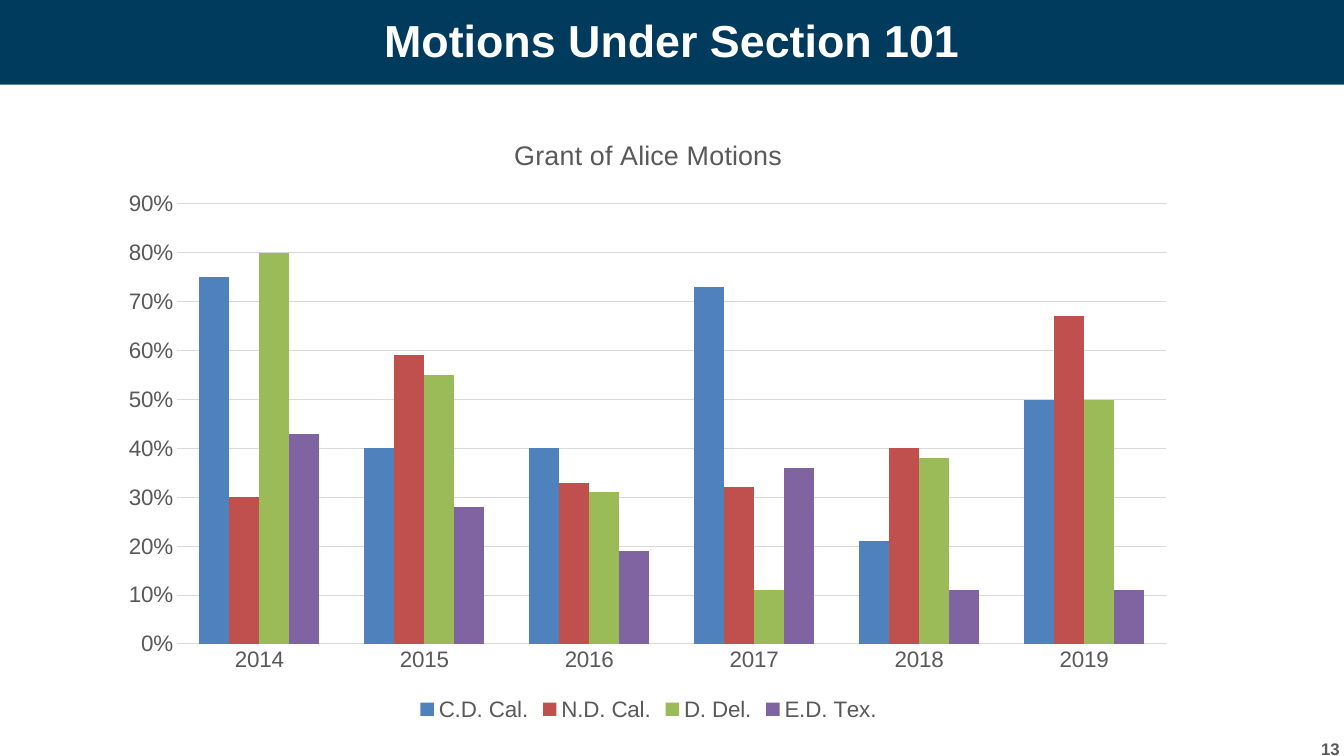
from lxml.etree import SubElement
from pptx import Presentation
from pptx.chart.data import CategoryChartData
from pptx.dml.color import RGBColor
from pptx.enum.chart import XL_CHART_TYPE, XL_LEGEND_POSITION, XL_TICK_MARK
from pptx.enum.shapes import MSO_SHAPE
from pptx.enum.text import MSO_ANCHOR, MSO_AUTO_SIZE, PP_ALIGN
from pptx.oxml.ns import qn
from pptx.util import Pt

NAVY = RGBColor(0x00, 0x3A, 0x5D)
WHITE = RGBColor(0xFF, 0xFF, 0xFF)
GRAY = RGBColor(0x59, 0x59, 0x59)
GRID_GRAY = RGBColor(0xD9, 0xD9, 0xD9)
BLUE = RGBColor(0x4F, 0x81, 0xBD)
RED = RGBColor(0xC0, 0x50, 0x4D)
GREEN = RGBColor(0x9B, 0xBB, 0x59)
PURPLE = RGBColor(0x80, 0x64, 0xA2)

FONT = "Arial"
YEARS = ["2014", "2015", "2016", "2017", "2018", "2019"]
COURTS = [
    ("C.D. Cal.", BLUE, (0.75, 0.4, 0.4, 0.73, 0.21, 0.5)),
    ("N.D. Cal.", RED, (0.3, 0.59, 0.33, 0.32, 0.4, 0.67)),
    ("D. Del.", GREEN, (0.8, 0.55, 0.31, 0.11, 0.38, 0.5)),
    ("E.D. Tex.", PURPLE, (0.43, 0.28, 0.19, 0.36, 0.11, 0.11)),
]


def style_font(font, size, color, bold=False):
    font.name = FONT
    font.size = Pt(size)
    font.bold = bold
    font.color.rgb = color


def write_line(frame, text, size, color, align):
    """Fill a frame with one bold, vertically centred line."""
    frame.word_wrap = True
    frame.auto_size = MSO_AUTO_SIZE.NONE
    frame.vertical_anchor = MSO_ANCHOR.MIDDLE
    para = frame.paragraphs[0]
    para.alignment = align
    span = para.add_run()
    span.text = text
    style_font(span.font, size, color, bold=True)
    return para


def add_title_band(page, width):
    band = page.shapes.add_shape(MSO_SHAPE.RECTANGLE, 0, 0, width, Pt(60.5))
    band.shadow.inherit = False
    band.fill.solid()
    band.fill.fore_color.rgb = NAVY
    band.line.fill.background()
    title = page.shapes.title
    title.left, title.top, title.width, title.height = Pt(24), Pt(6), Pt(912), Pt(50)
    band.element.addnext(title.element)
    para = write_line(title.text_frame, "Motions Under Section 101", 32, WHITE, PP_ALIGN.CENTER)
    para.line_spacing = 0.9


def add_page_number(page, number):
    box = page.shapes.add_textbox(Pt(733), Pt(528), Pt(224), Pt(13.5))
    frame = box.text_frame
    frame.margin_left = frame.margin_right = frame.margin_top = frame.margin_bottom = 0
    write_line(frame, number, 12, GRAY, PP_ALIGN.RIGHT)


def style_axis(axis):
    axis.major_tick_mark = axis.minor_tick_mark = XL_TICK_MARK.NONE
    axis.format.line.fill.background()
    style_font(axis.tick_labels.font, 16, GRAY)


def place_plot_area(chart, x, y, w, h):
    """Fix the inner plot area, in fractions of the chart."""
    plot_area = chart.element.find(".//" + qn("c:plotArea"))
    layout = plot_area.find(qn("c:layout"))
    if layout is None:
        layout = SubElement(plot_area, qn("c:layout"))
        plot_area.insert(0, layout)
    manual = SubElement(layout, qn("c:manualLayout"))
    settings = [("layoutTarget", "inner"), ("xMode", "edge"), ("yMode", "edge"),
                ("x", x), ("y", y), ("w", w), ("h", h)]
    for name, value in settings:
        SubElement(manual, qn("c:" + name)).set("val", str(value))


def add_court_chart(page):
    data = CategoryChartData(number_format="0%")
    data.categories = YEARS
    for court, _, rates in COURTS:
        data.add_series(court, rates)
    chart = page.shapes.add_chart(
        XL_CHART_TYPE.COLUMN_CLUSTERED, Pt(77), Pt(82), Pt(772.5), Pt(436.5), data
    ).chart
    style_font(chart.font, 16, GRAY)

    chart.has_title = True
    span = chart.chart_title.text_frame.paragraphs[0].add_run()
    span.text = "Grant of Alice Motions"
    style_font(span.font, 19.2, GRAY)
    chart.chart_title.include_in_layout = False

    chart.has_legend = True
    chart.legend.position = XL_LEGEND_POSITION.BOTTOM
    chart.legend.include_in_layout = False
    style_font(chart.legend.font, 16, GRAY)

    style_axis(chart.category_axis)
    rate_axis = chart.value_axis
    style_axis(rate_axis)
    rate_axis.minimum_scale, rate_axis.maximum_scale, rate_axis.major_unit = 0, 0.9, 0.1
    rate_axis.tick_labels.number_format = "0%"
    rate_axis.tick_labels.number_format_is_linked = False
    grid = rate_axis.major_gridlines.format.line
    grid.color.rgb = GRID_GRAY
    grid.width = Pt(0.75)

    plot = chart.plots[0]
    plot.gap_width = 150
    plot.overlap = 0
    plot.vary_by_categories = False
    for series, (_, color, _) in zip(plot.series, COURTS):
        series.format.fill.solid()
        series.format.fill.fore_color.rgb = color
    place_plot_area(chart, 0.064, 0.146, 0.915, 0.72)


def main():
    deck = Presentation()
    deck.slide_width, deck.slide_height = Pt(960), Pt(540)
    page = deck.slides.add_slide(deck.slide_layouts[5])
    add_title_band(page, deck.slide_width)
    add_court_chart(page)
    add_page_number(page, "13")
    deck.save("out.pptx")


if __name__ == "__main__":
    main()
